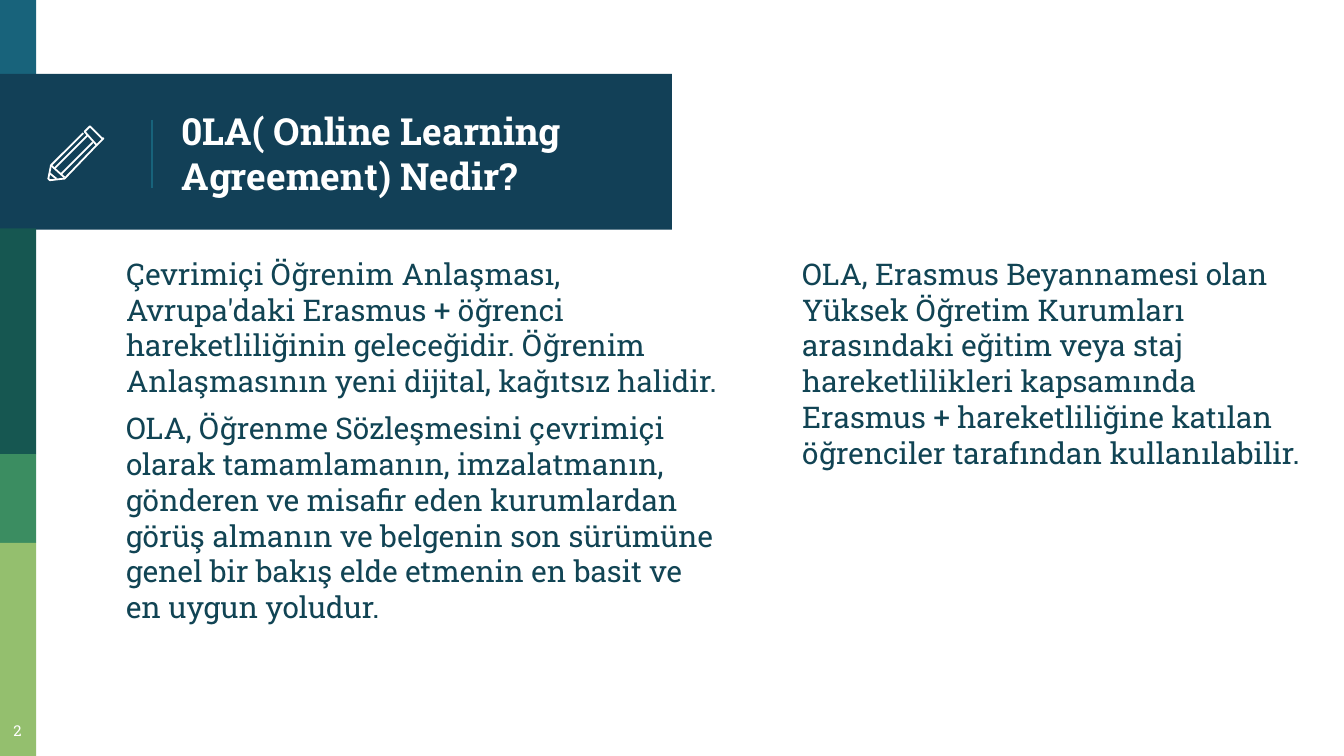
from typing import NamedTuple

from pptx import Presentation
from pptx.dml.color import RGBColor
from pptx.enum.shapes import MSO_CONNECTOR, MSO_SHAPE
from pptx.enum.text import MSO_ANCHOR, MSO_AUTO_SIZE, PP_ALIGN
from pptx.oxml.ns import qn
from pptx.util import Inches, Pt
from lxml import etree

RECT = MSO_SHAPE.RECTANGLE
STRAIGHT = MSO_CONNECTOR.STRAIGHT
LEFT, CENTER = PP_ALIGN.LEFT, PP_ALIGN.CENTER
TOP, MIDDLE = MSO_ANCHOR.TOP, MSO_ANCHOR.MIDDLE
NO_AUTOFIT = MSO_AUTO_SIZE.NONE

FONT = "Roboto Slab"
WHITE, TEAL, NAVY, INK = "FFFFFF", "18637B", "124057", "114454"


class Band(NamedTuple):
    top: float
    width: float
    height: float
    color: str


class TextBlock(NamedTuple):
    left: float
    top: float
    width: float
    height: float
    paragraphs: list[str]
    size: float = 16
    color: str = INK
    align: PP_ALIGN = LEFT


class Stroke(NamedTuple):
    points: list[tuple[int, int]]  # hundredths of an inch
    closed: bool = False


BANDS = [
    Band(0, 0.27, 0.58, TEAL),
    Band(0.55, 5, 1.16, NAVY),
    Band(1.7, 0.27, 1.68, "165751"),
    Band(3.38, 0.27, 0.66, "3B8D61"),
    Band(4.04, 0.27, 1.59, "94BF6E"),
]

PENCIL = [
    # Eraser
    Stroke([(76, 103), (68, 95), (67, 94), (66, 95), (63, 98),
            (72, 108), (76, 104), (77, 103)], closed=True),
    # Long edge
    Stroke([(69, 106), (45, 130)]),
    # Body and tip
    Stroke([(62, 99), (38, 123), (36, 133), (37, 134), (38, 134),
            (47, 133), (48, 133), (72, 108)]),
    # Other long edge
    Stroke([(41, 125), (65, 101)]),
    # Lead and sharpened edge
    Stroke([(42, 133), (37, 129)]),
    Stroke([(38, 123), (48, 132)]),
]

BLOCKS = [
    TextBlock(0.84, 1.8, 4.63, 3.65, [
        "Çevrimiçi Öğrenim Anlaşması, Avrupa'daki Erasmus + öğrenci "
        "hareketliliğinin geleceğidir. Öğrenim Anlaşmasının yeni dijital, "
        "kağıtsız halidir.",
        "OLA, Öğrenme Sözleşmesini çevrimiçi olarak tamamlamanın, "
        "imzalatmanın, gönderen ve misafir eden kurumlardan görüş almanın ve "
        "belgenin son sürümüne genel bir bakış elde etmenin en basit ve en "
        "uygun yoludur.",
    ]),
    TextBlock(5.87, 1.8, 3.95, 2.09, [
        "OLA, Erasmus Beyannamesi olan Yüksek Öğretim Kurumları arasındaki "
        "eğitim veya staj hareketlilikleri kapsamında Erasmus + "
        "hareketliliğine katılan öğrenciler tarafından kullanılabilir.",
    ]),
    TextBlock(-0.06, 5.27, 0.38, 0.35, ["2"], 8, WHITE, CENTER),
]
TITLE = TextBlock(1.25, 0.58, 3.51, 1.12,
                  ["0LA( Online Learning Agreement) Nedir?"], 20, WHITE)


def rgb(color: str) -> RGBColor:
    return RGBColor.from_string(color)


def add_band(s, band: Band) -> None:
    sp = s.shapes.add_shape(RECT, 0, Inches(band.top),
                            Inches(band.width), Inches(band.height))
    sp.shadow.inherit = False
    sp.fill.solid()
    sp.fill.fore_color.rgb = rgb(band.color)
    sp.line.fill.background()


def add_divider(s, x: float, top: float, bottom: float) -> None:
    line = s.shapes.add_connector(STRAIGHT, Inches(x), Inches(top),
                                  Inches(x), Inches(bottom))
    line.line.color.rgb = rgb(TEAL)
    line.line.width = Pt(0.75)
    etree.SubElement(line._element.spPr, qn("a:effectLst"))


def add_stroke(group, stroke: Stroke) -> None:
    start, *rest = stroke.points
    builder = group.shapes.build_freeform(*start, scale=Inches(0.01))
    builder.add_line_segments(rest, close=stroke.closed)
    sp = builder.convert_to_shape()
    sp.shadow.inherit = False
    sp.fill.background()
    sp.line.color.rgb = rgb(WHITE)
    sp.line.width = Pt(0.96)


def fill_text(sp, block: TextBlock, anchor: MSO_ANCHOR = TOP,
              bold: bool = False) -> None:
    tf = sp.text_frame
    tf.word_wrap = True
    tf.auto_size = NO_AUTOFIT
    tf.vertical_anchor = anchor
    tf.margin_left = tf.margin_right = Inches(0.1)
    tf.margin_top = tf.margin_bottom = Inches(0.1)
    for i, text in enumerate(block.paragraphs):
        p = tf.add_paragraph() if i else tf.paragraphs[0]
        p.alignment = block.align
        p.space_before = Pt(6 if i else 0)
        r = p.add_run()
        r.text = text
        r.font.name = FONT
        r.font.size = Pt(block.size)
        r.font.bold = bold
        r.font.color.rgb = rgb(block.color)


def place_title(s, block: TextBlock) -> None:
    sp = s.shapes.title
    sp.left, sp.top = Inches(block.left), Inches(block.top)
    sp.width, sp.height = Inches(block.width), Inches(block.height)
    fill_text(sp, block, MIDDLE, bold=True)
    s.shapes._spTree.append(sp._element)  # in front of the banner


def add_text(s, block: TextBlock) -> None:
    sp = s.shapes.add_textbox(Inches(block.left), Inches(block.top),
                              Inches(block.width), Inches(block.height))
    fill_text(sp, block)


def main() -> None:
    prs = Presentation()
    prs.slide_width = Inches(10)
    prs.slide_height = Inches(10) * 9 // 16  # widescreen
    s = prs.slides.add_slide(prs.slide_layouts[5])

    # Side bar and title banner
    for band in BANDS:
        add_band(s, band)
    add_divider(s, 1.13, 0.89, 1.4)
    place_title(s, TITLE)

    # Pencil icon
    pencil = s.shapes.add_group_shape()
    for stroke in PENCIL:
        add_stroke(pencil, stroke)

    # Body columns and slide number
    for block in BLOCKS:
        add_text(s, block)

    prs.save("out.pptx")


if __name__ == "__main__":
    main()
